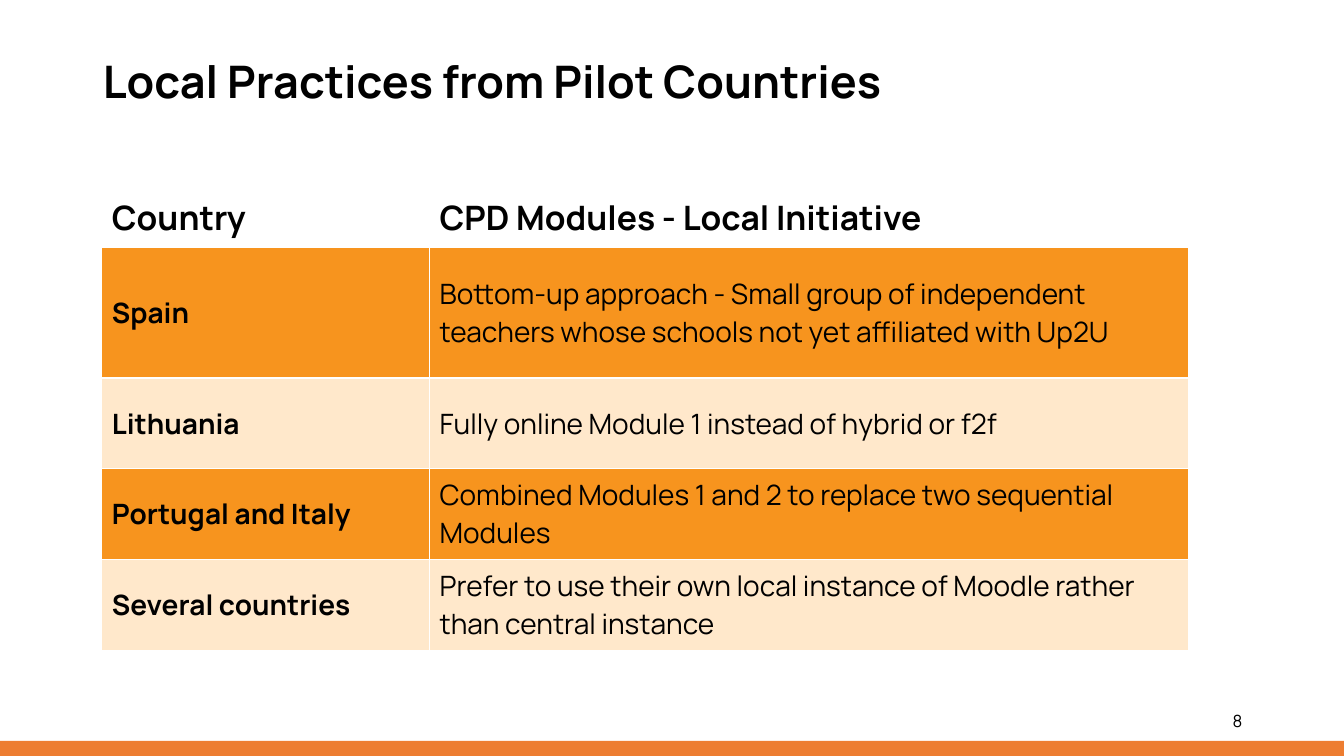
from lxml import etree
from pptx import Presentation
from pptx.dml.color import RGBColor
from pptx.enum.shapes import MSO_SHAPE
from pptx.enum.text import MSO_ANCHOR, PP_ALIGN
from pptx.oxml.ns import qn
from pptx.util import Inches, Pt

MIDDLE, TOP = MSO_ANCHOR.MIDDLE, MSO_ANCHOR.TOP
LEFT, RIGHT = PP_ALIGN.LEFT, PP_ALIGN.RIGHT
RECTANGLE = MSO_SHAPE.RECTANGLE
TITLE_ONLY = 5

COLORS = {
    "text": "000000",
    "header": "FFFFFF",
    "border": "FFFFFF",
    "odd": "F7941E",
    "even": "FFE8CB",
    "footer": "ED7D31",
}
COLUMN_WIDTHS = [3.25, 7.53]
ROW_HEIGHTS = [0.57, 1.3, 0.9, 0.9, 0.9]
PRACTICES = [
    ("Country", "CPD Modules - Local Initiative"),
    ("Spain", "Bottom-up approach - Small group of independent teachers "
              "whose schools not yet affiliated with Up2U"),
    ("Lithuania", "Fully online Module 1 instead of hybrid or f2f"),
    ("Portugal and Italy", "Combined Modules 1 and 2 to replace two sequential Modules"),
    ("Several countries", "Prefer to use their own local instance of Moodle "
                          "rather than central instance"),
]


def write(frame, text, size, bold=False, align=LEFT):
    frame.text = text
    frame.word_wrap = True
    paragraph = frame.paragraphs[0]
    paragraph.alignment = align
    paragraph.font.name = "Manrope"
    paragraph.font.size = Pt(size)
    paragraph.font.bold = bold
    paragraph.font.color.rgb = RGBColor.from_string(COLORS["text"])
    return paragraph


def add_borders(cell):
    """Put a 1 pt line on all four sides, ahead of the cell's fill."""
    properties = cell._tc.get_or_add_tcPr()
    for position, side in enumerate(("lnL", "lnR", "lnT", "lnB")):
        line = etree.Element(qn(f"a:{side}"), w=str(Pt(1)))
        fill = etree.SubElement(line, qn("a:solidFill"))
        etree.SubElement(fill, qn("a:srgbClr"), val=COLORS["border"])
        properties.insert(position, line)


prs = Presentation()
prs.slide_width, prs.slide_height = Inches(13.33), Inches(7.5)
slide = prs.slides.add_slide(prs.slide_layouts[TITLE_ONLY])

footer_height = Inches(0.15)
footer = slide.shapes.add_shape(
    RECTANGLE, 0, prs.slide_height - footer_height, prs.slide_width, footer_height)
footer.shadow.inherit = False
footer.fill.solid()
footer.fill.fore_color.rgb = RGBColor.from_string(COLORS["footer"])
footer.line.fill.background()

title = slide.shapes.title
title.left, title.top = Inches(0.92), Inches(0.4)
title.width, title.height = Inches(10.08), Inches(0.86)
title.text_frame.vertical_anchor = MIDDLE
write(title.text_frame, "Local Practices from Pilot Countries", 32, bold=True).line_spacing = 0.9

table = slide.shapes.add_table(
    len(ROW_HEIGHTS), len(COLUMN_WIDTHS), Inches(1.01), Inches(1.88),
    Inches(sum(COLUMN_WIDTHS)), Inches(sum(ROW_HEIGHTS))).table
for column, width in zip(table.columns, COLUMN_WIDTHS):
    column.width = Inches(width)
for r, (row, texts) in enumerate(zip(table.rows, PRACTICES)):
    row.height = Inches(ROW_HEIGHTS[r])
    is_header = r == 0
    band = "header" if is_header else "odd" if r % 2 else "even"
    for c, (cell, text) in enumerate(zip(row.cells, texts)):
        write(cell.text_frame, text, 24 if is_header else 20, bold=is_header or c == 0)
        cell.vertical_anchor = TOP if is_header else MIDDLE
        cell.fill.solid()
        cell.fill.fore_color.rgb = RGBColor.from_string(COLORS[band])
        add_borders(cell)

page_number = slide.shapes.add_textbox(Inches(9.42), Inches(6.95), Inches(3), Inches(0.4))
page_number.text_frame.vertical_anchor = MIDDLE
write(page_number.text_frame, "8", 12, align=RIGHT)

prs.save("out.pptx")
